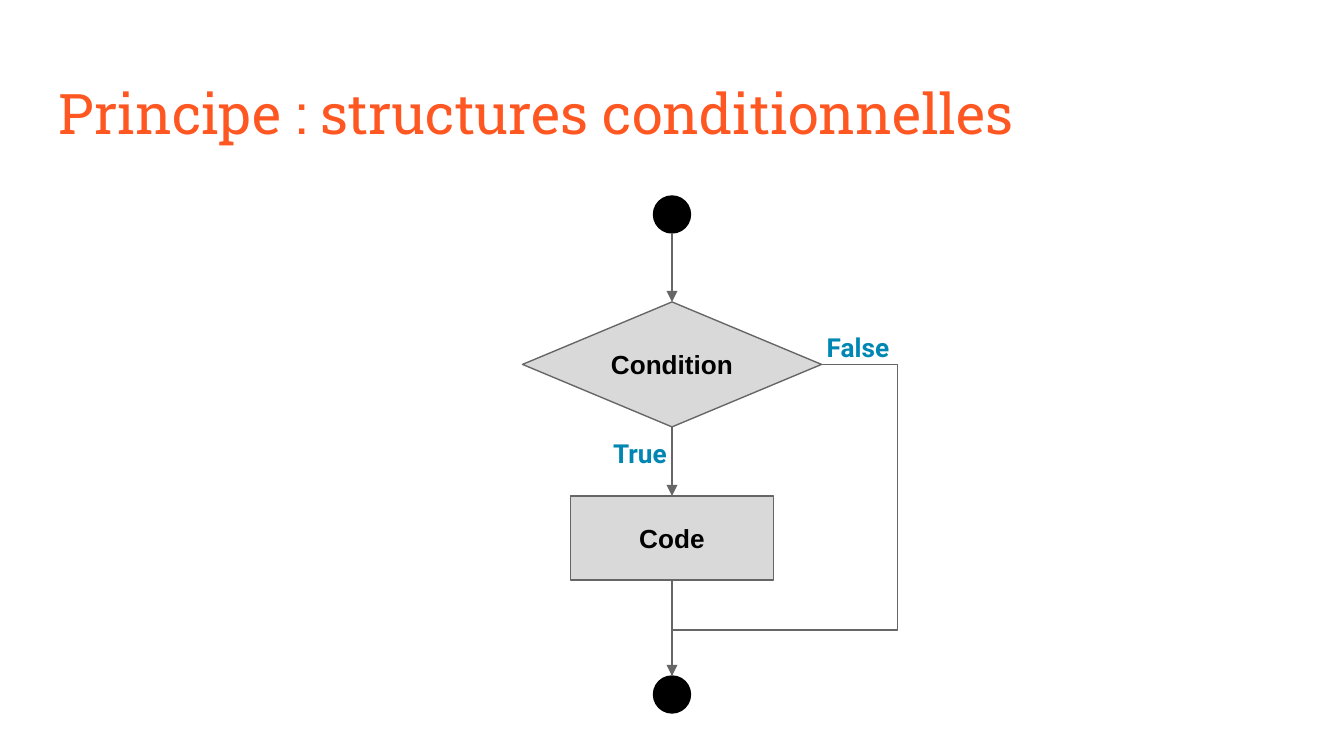
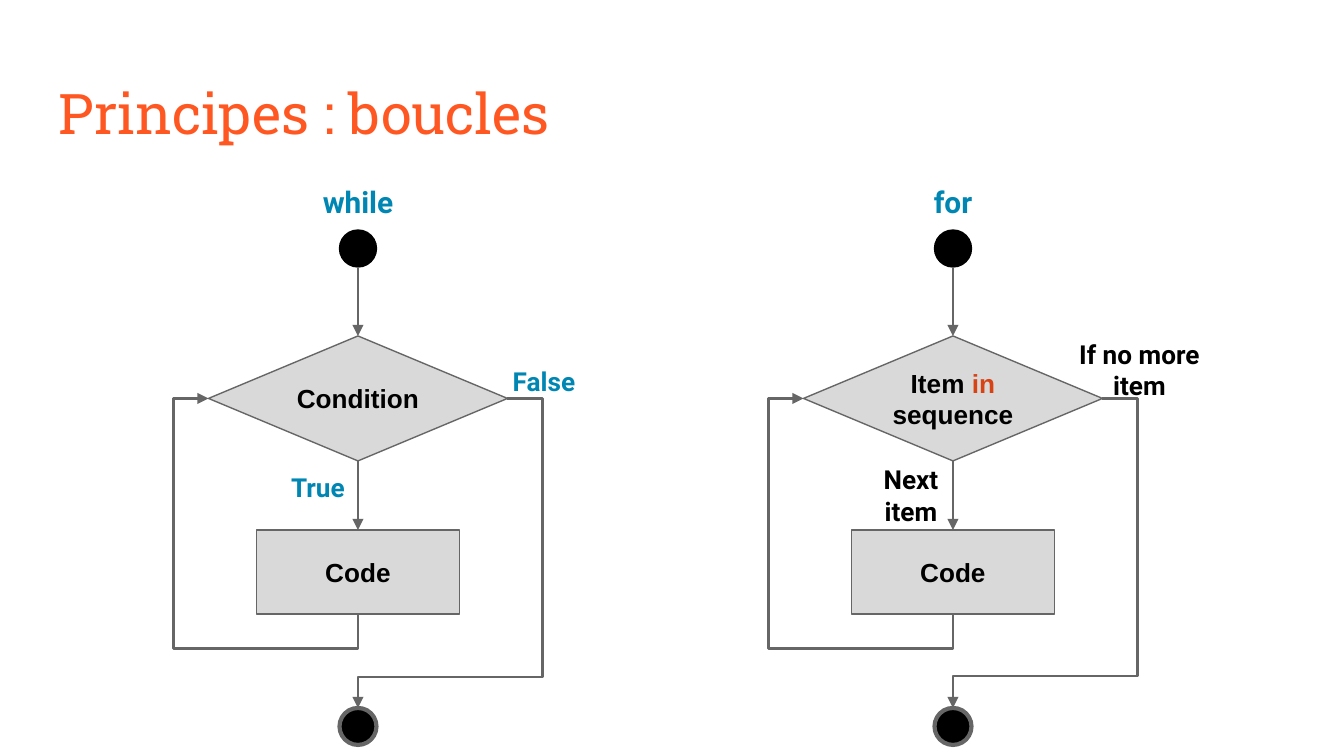
"""Build two slides of flowcharts: the conditional structure, then the while and for loops."""
from lxml.etree import SubElement
from pptx import Presentation
from pptx.dml.color import RGBColor
from pptx.enum.shapes import MSO_CONNECTOR, MSO_SHAPE
from pptx.enum.text import MSO_ANCHOR, PP_ALIGN
from pptx.oxml.ns import qn
from pptx.util import Pt

PX = 914400 / 134.4
SLIDE_SIZE = (1344, 756)
INSET = 13

ORANGE, DEEP_ORANGE, BLUE = "FF5722", "D84315", "0086B3"
BLACK, GREY, LIGHT_GREY = "000000", "666666", "D9D9D9"

TITLE_BOX = (46, 66, 1252, 85)
HEADING_TOP, HEADING_SIZE = 171, (419, 63)
DOT, DIAMOND, CODE = (37, 37), (299, 125), (203, 84)
START_RISE, CODE_DROP = 106, 194
LOOP_OUT, LOOP_BOTTOM = 35, 649
TOP, LEFT, BOTTOM, RIGHT = range(4)

CONDITION = [("Condition", BLACK)]
CODE_TEXT = [("Code", BLACK)]

SLIDES = [
    ("Principe : structures conditionnelles", [
        {"center": 672, "diamond_top": 302, "end_top": 676, "loop": False,
         "test": CONDITION, "exit_out": 76, "exit_bottom": 630,
         "entry_width": 0.75, "flow_width": 0.75, "end_line": (BLACK, 0.75),
         "labels": [("False", BLUE, (137, 16, 98, 59)),
                    ("True", BLUE, (-81, 122, 98, 59))]},
    ]),
    ("Principes : boucles", [
        {"heading": "while", "center": 358, "diamond_top": 336, "end_top": 708, "loop": True,
         "test": CONDITION, "exit_out": 35, "exit_bottom": 677,
         "entry_width": 0.75, "flow_width": 1.5, "end_line": (GREY, 2.25),
         "labels": [("False", BLUE, (137, 16, 98, 59)),
                    ("True", BLUE, (-89, 122, 98, 59))]},
        {"heading": "for", "center": 953, "diamond_top": 336, "end_top": 708, "loop": True,
         "test": [("Item ", BLACK), ("in", DEEP_ORANGE), (" sequence", BLACK)],
         "exit_out": 35, "exit_bottom": 676,
         "entry_width": 1.5, "flow_width": 1.5, "end_line": (GREY, 2.25),
         "labels": [("If no more item", BLACK, (109, -9, 155, 85)),
                    ("Next item", BLACK, (-91, 124, 98, 70))]},
    ]),
]


def emu(*lengths):
    return [round(length * PX) for length in lengths]


def rgb(color):
    return RGBColor.from_string(color)


def write(shape, runs, size, font, bold=True, align=PP_ALIGN.CENTER, anchor=MSO_ANCHOR.MIDDLE):
    frame = shape.text_frame
    frame.word_wrap = True
    frame.vertical_anchor = anchor
    inset, = emu(INSET)
    frame.margin_left = frame.margin_right = frame.margin_top = frame.margin_bottom = inset
    paragraph = frame.paragraphs[0]
    paragraph.alignment = align
    paragraph.font.size = Pt(size)
    paragraph.font.name = font
    paragraph.font.bold = bold
    paragraph.font.color.rgb = rgb(runs[0][1])
    for text, color in runs:
        run = paragraph.add_run()
        run.text = text
        if len(runs) > 1:
            run.font.color.rgb = rgb(color)


def add_label(slide, box, runs, size, font="Roboto", **style):
    write(slide.shapes.add_textbox(*emu(*box)), runs, size, font, **style)


def add_node(slide, preset, center, top, size, fill, line, runs=None):
    node = slide.shapes.add_shape(preset, *emu(center - size[0] / 2, top, *size))
    node.shadow.inherit = False
    node.fill.solid()
    node.fill.fore_color.rgb = rgb(fill)
    node.line.color.rgb = rgb(line[0])
    node.line.width = Pt(line[1])
    if runs:
        write(node, runs, 14, "Arial")
    return node


def finish_line(connector, width, arrow):
    connector.line.color.rgb = rgb(GREY)
    connector.line.width = Pt(width)
    properties = connector.element.spPr
    if arrow:
        SubElement(properties.find(qn("a:ln")), qn(f"a:{arrow}"), type="triangle")
    SubElement(properties, qn("a:effectLst"))


def add_arrow(slide, center, start, end, width, source=None):
    x, y = emu(center, start)
    arrow = slide.shapes.add_connector(MSO_CONNECTOR.STRAIGHT, x, y, x, end.top)
    if source:
        arrow.begin_connect(source, BOTTOM)
    arrow.end_connect(end, TOP)
    finish_line(arrow, width, "tailEnd")


def add_detour(slide, source, source_side, target, target_side, lane, width, arrow):
    detour = slide.shapes.add_connector(MSO_CONNECTOR.ELBOW, 0, 0, 0, 0)
    detour.begin_connect(source, source_side)
    detour.end_connect(target, target_side)
    lane_x, lane_y = emu(*lane)
    ratios = ((lane_x - detour.begin_x) / (detour.end_x - detour.begin_x),
              (lane_y - detour.begin_y) / (detour.end_y - detour.begin_y))
    geometry = detour.element.spPr.find(qn("a:prstGeom"))
    geometry.set("prst", "bentConnector4")
    guides = geometry.find(qn("a:avLst"))
    if guides is None:
        guides = SubElement(geometry, qn("a:avLst"))
    for number, ratio in enumerate(ratios, 1):
        SubElement(guides, qn("a:gd"), name=f"adj{number}", fmla=f"val {round(ratio * 100000)}")
    finish_line(detour, width, arrow)


def add_flowchart(slide, flow):
    center, top, width = flow["center"], flow["diamond_top"], flow["flow_width"]
    start_top, code_top = top - START_RISE, top + CODE_DROP
    side = DIAMOND[0] / 2

    add_node(slide, MSO_SHAPE.OVAL, center, start_top, DOT, BLACK, (BLACK, 0.75))
    end = add_node(slide, MSO_SHAPE.OVAL, center, flow["end_top"], DOT, BLACK, flow["end_line"])
    test = add_node(slide, MSO_SHAPE.FLOWCHART_DECISION, center, top, DIAMOND,
                    LIGHT_GREY, (GREY, 0.75), flow["test"])
    code = add_node(slide, MSO_SHAPE.RECTANGLE, center, code_top, CODE,
                    LIGHT_GREY, (GREY, 0.75), CODE_TEXT)

    add_arrow(slide, center, start_top + DOT[1], test, flow["entry_width"])
    add_arrow(slide, center, top + DIAMOND[1], code, width, test)
    exit_lane = (center + side + flow["exit_out"], flow["exit_bottom"])
    add_detour(slide, test, RIGHT, end, TOP, exit_lane, width,
               "tailEnd" if flow["loop"] else None)
    if flow["loop"]:
        loop_lane = (center - side - LOOP_OUT, LOOP_BOTTOM)
        add_detour(slide, test, LEFT, code, BOTTOM, loop_lane, width, "headEnd")
    else:
        add_arrow(slide, center, code_top + CODE[1], end, width, code)

    for text, color, (dx, dy, *size) in flow["labels"]:
        add_label(slide, (center + dx, top + dy, *size), [(text, color)], 14)
    if "heading" in flow:
        add_label(slide, (center - HEADING_SIZE[0] / 2, HEADING_TOP, *HEADING_SIZE),
                  [(flow["heading"], BLUE)], 16, anchor=MSO_ANCHOR.TOP)


def main():
    deck = Presentation()
    deck.slide_width, deck.slide_height = emu(*SLIDE_SIZE)
    for title, flows in SLIDES:
        slide = deck.slides.add_slide(deck.slide_layouts[6])
        add_label(slide, TITLE_BOX, [(title, ORANGE)], 30, "Roboto Slab", bold=False,
                  align=PP_ALIGN.LEFT, anchor=MSO_ANCHOR.TOP)
        for flow in flows:
            add_flowchart(slide, flow)
    deck.save("out.pptx")


if __name__ == "__main__":
    main()
